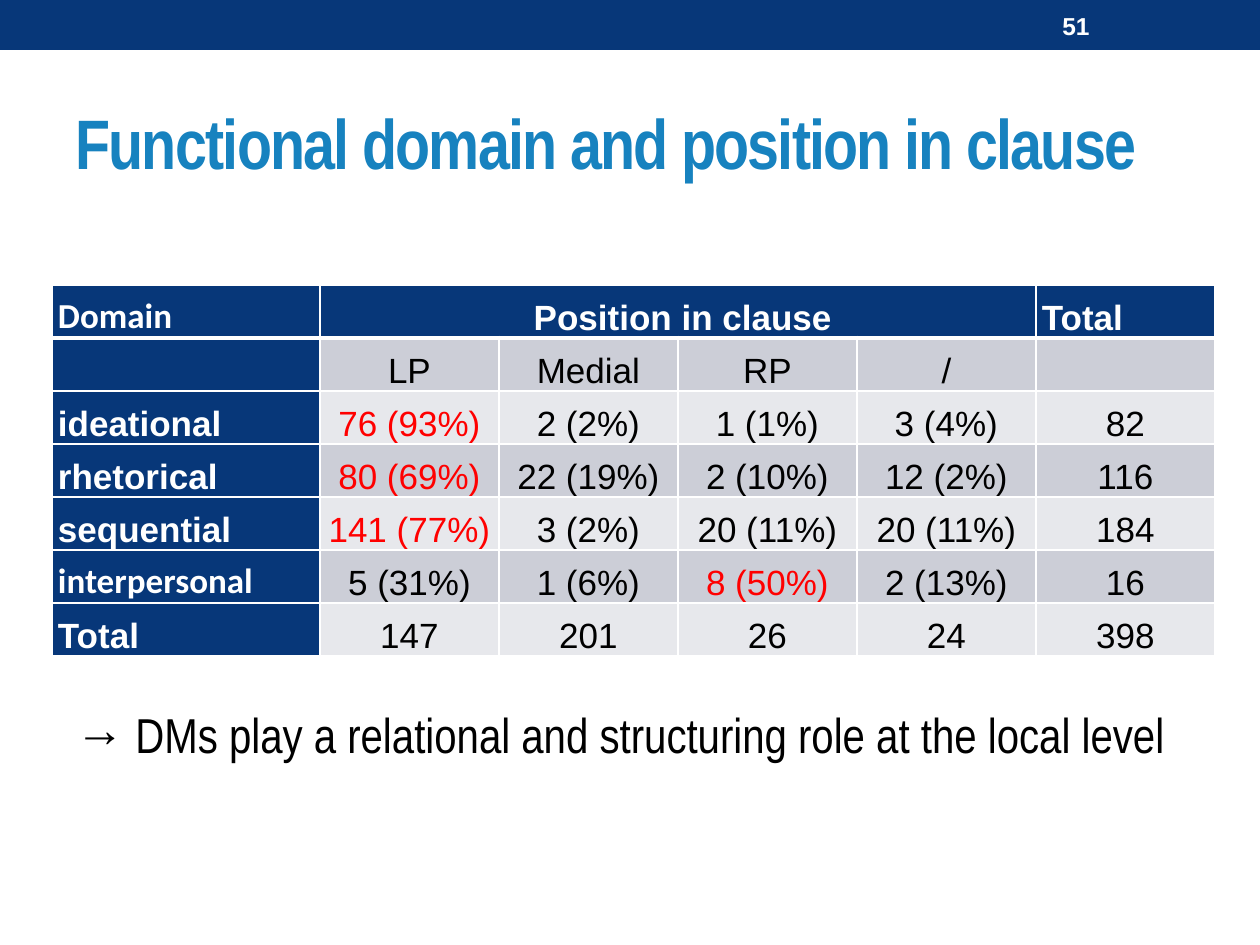
from dataclasses import dataclass

from lxml.etree import SubElement
from pptx import Presentation
from pptx.dml.color import RGBColor
from pptx.enum.shapes import MSO_SHAPE as Preset
from pptx.enum.text import MSO_ANCHOR as Anchor, PP_ALIGN as Align
from pptx.oxml.ns import qn
from pptx.util import Emu, Pt

PX = 914400 // 126
NAVY, BLUE, WHITE, BLACK, RED = "073779", "1782BF", "FFFFFF", "000000", "FF0000"
BANDS = ("E7E8EC", "CCCED7")
LABEL_WIDTH, VALUE_WIDTH, ROW_HEIGHT = 268, 179, 53
COUNTS = (
    ("Domain", " Position in clause", "", "", "", "Total"),
    ("", "LP", "Medial", "RP", "/", ""),
    ("ideational", "76 (93%)", "2 (2%)", "1 (1%)", "3 (4%)", "82"),
    ("rhetorical", "80 (69%)", "22 (19%)", "2 (10%)", "12 (2%)", "116"),
    ("sequential", "141 (77%)", "3 (2%)", "20 (11%)", "20 (11%)", "184"),
    ("interpersonal", "5 (31%)", "1 (6%)", "8 (50%)", "2 (13%)", "16"),
    ("Total", "147", "201", "26", "24", "398"),
)
HIGHLIGHTS = {(2, 1), (3, 1), (4, 1), (5, 3)}
CALIBRI_LABELS = {"Domain", "interpersonal"}


@dataclass(frozen=True)
class Style:
    """Look of one run of text."""
    size: int
    font: str
    color: str
    bold: bool = False
    spacing: int = 0


@dataclass(frozen=True)
class Caption:
    """One free-standing line of text, placed in px."""
    text: str
    left: int
    top: int
    width: int
    height: int
    style: Style
    anchor: Anchor = Anchor.MIDDLE
    space_before: float = 0


CAPTIONS = (
    Caption("Functional domain and position in clause", 63, 73, 1134, 136,
            Style(40, "Arial Narrow", BLUE, True, -100)),
    Caption("→ DMs play a relational and structuring role at the local level",
            63, 698, 1134, 131, Style(28, "Arial Narrow", BLACK), Anchor.TOP, 5.6),
    Caption("51", 1050, 3, 147, 45, Style(14, "Arial", WHITE, True)),
)


def px(length: int) -> Emu:
    """Turn px into EMU."""
    return Emu(length * PX)


def rgb(color: str) -> RGBColor:
    """Turn a hex string into a colour."""
    return RGBColor.from_string(color)


def add_run(paragraph, text: str, style: Style) -> None:
    """Add one styled run to a paragraph."""
    run = paragraph.add_run()
    run.text = text
    run.font.size = Pt(style.size)
    run.font.name = style.font
    run.font.bold = style.bold
    run.font.color.rgb = rgb(style.color)
    if style.spacing:
        run.font._element.set("spc", str(style.spacing))


def add_caption(slide, caption: Caption) -> None:
    """Draw one line of text in its own box."""
    box = slide.shapes.add_textbox(px(caption.left), px(caption.top),
                                   px(caption.width), px(caption.height))
    frame = box.text_frame
    frame.word_wrap = True
    frame.vertical_anchor = caption.anchor
    frame.paragraphs[0].space_before = Pt(caption.space_before)
    add_run(frame.paragraphs[0], caption.text, caption.style)


def add_banner(slide) -> None:
    """Draw the band across the top of the slide."""
    banner = slide.shapes.add_shape(Preset.RECTANGLE, 0, 0, px(1260), px(50))
    banner.shadow.inherit = False
    banner.fill.solid()
    banner.fill.fore_color.rgb = rgb(NAVY)
    banner.line.fill.background()


def set_border(cell, side: str, width: int) -> None:
    """Give one side of a cell a white line, its width in points."""
    line = SubElement(cell._tc.get_or_add_tcPr(), qn(f"a:ln{side}"), w=str(Pt(width)))
    SubElement(SubElement(line, qn("a:solidFill")), qn("a:srgbClr"), val=WHITE)


def fill_cell(cell, row: int, column: int, text: str) -> None:
    """Format one table cell and write its text."""
    heading = row == 0 or column == 0
    for side in "LRTB":
        thick = (row == 0 and side == "B") or (row == 1 and side == "T")
        set_border(cell, side, 3 if thick else 1)
    cell.fill.solid()
    cell.fill.fore_color.rgb = rgb(NAVY if heading else BANDS[row % 2])
    cell.vertical_anchor = Anchor.BOTTOM
    cell.margin_left = cell.margin_right = px(6)
    cell.margin_top = cell.margin_bottom = 0
    if not text:
        return
    paragraph = cell.text_frame.paragraphs[0]
    left_aligned = column == 0 or (row == 0 and column == 5)
    paragraph.alignment = Align.LEFT if left_aligned else Align.CENTER
    color = WHITE if heading else RED if (row, column) in HIGHLIGHTS else BLACK
    font = "Calibri" if text in CALIBRI_LABELS else "Arial"
    add_run(paragraph, text, Style(20, font, color, heading))


def add_counts(slide) -> None:
    """Draw the table of domains by position."""
    rows, columns = len(COUNTS), len(COUNTS[0])
    width = LABEL_WIDTH + VALUE_WIDTH * (columns - 1)
    table = slide.shapes.add_table(rows, columns, px(52), px(285),
                                   px(width), px(ROW_HEIGHT * rows)).table
    for index, column in enumerate(table.columns):
        column.width = px(VALUE_WIDTH if index else LABEL_WIDTH)
    for row in table.rows:
        row.height = px(ROW_HEIGHT)
    table.cell(0, 1).merge(table.cell(0, 4))
    for row, texts in enumerate(COUNTS):
        for column, text in enumerate(texts):
            fill_cell(table.cell(row, column), row, column, text)


def main() -> None:
    """Build the slide and save it."""
    deck = Presentation()
    deck.slide_width, deck.slide_height = px(1260), px(945)
    slide = deck.slides.add_slide(deck.slide_layouts[6])
    add_banner(slide)
    for caption in CAPTIONS:
        add_caption(slide, caption)
    add_counts(slide)
    deck.save("out.pptx")


if __name__ == "__main__":
    main()
